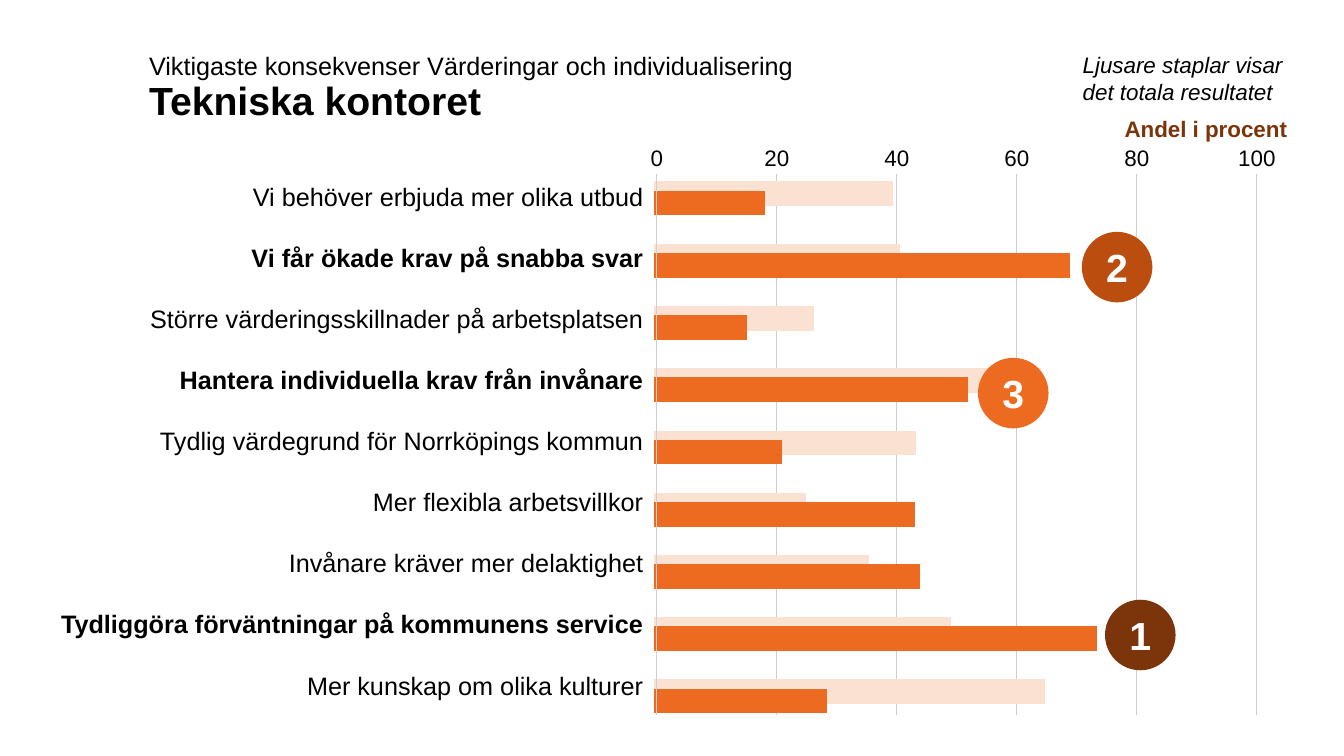
import lxml.etree as etree
import pptx
import pptx.chart.data
import pptx.dml.color
import pptx.enum.chart
import pptx.enum.shapes
import pptx.enum.text
import pptx.oxml.ns
import pptx.util

PX = 9144  # 100 px to the inch
ALIGN = pptx.enum.text.PP_ALIGN
ANCHOR = pptx.enum.text.MSO_ANCHOR
BLACK, WHITE, GRID = "000000", "FFFFFF", "D0CECE"
PALE, ORANGE, RUST, BROWN = "FBE1D2", "ED6B20", "BB4E0F", "7C340A"
qn = pptx.oxml.ns.qn


def color(value):
    return pptx.dml.color.RGBColor.from_string(value)


def write(frame, text, size=16, fill=BLACK, bold=False, italic=False,
          align=ALIGN.LEFT, anchor=ANCHOR.MIDDLE, wrap=True, spacing=None):
    frame.word_wrap = wrap
    frame.vertical_anchor = anchor
    paragraph = frame.paragraphs[0]
    paragraph.alignment = align
    paragraph.line_spacing = spacing
    run = paragraph.add_run()
    run.text = text
    run.font.name = "Arial"
    run.font.size = pptx.util.Pt(size)
    run.font.bold = bold
    run.font.italic = italic
    run.font.color.rgb = color(fill)


presentation = pptx.Presentation()
presentation.slide_width = 1333 * PX
presentation.slide_height = 750 * PX
slide = presentation.slides.add_slide(presentation.slide_layouts[6])
shapes = slide.shapes

# Bars: total result in pale, this office in orange; gridlines lie around them
AXIS_LEFT, AXIS_STEP = 651, 119
categories = [str(number) for number in range(1, 10)]
chart_layers = [
    (150, 154, PALE, [61, 63, 41, 99, 67, 39, 55, 76, 100]),
    (159, 136, ORANGE, [25, 94, 21, 71, 29, 59, 60, 100, 39]),
]
grid_layers = [(4, 3, 2, 1), (0, 5)]


def draw_gridlines(steps):
    for step in steps:
        x = (AXIS_LEFT + step * AXIS_STEP) * PX
        line = shapes.add_connector(pptx.enum.shapes.MSO_CONNECTOR.STRAIGHT,
                                    x, 173 * PX, x, 709 * PX)
        line.line.color.rgb = color(GRID)
        line.line.width = pptx.util.Pt(0.75)
        etree.SubElement(line._element.spPr, qn("a:effectLst"))


draw_gridlines(grid_layers[0])

for top, maximum, fill, values in chart_layers:
    data = pptx.chart.data.CategoryChartData()
    data.categories = categories
    data.add_series("Series 1", values)
    chart = shapes.add_chart(pptx.enum.chart.XL_CHART_TYPE.BAR_CLUSTERED,
                             636 * PX, top * PX, 626 * PX, 579 * PX, data).chart
    chart.has_legend = False
    chart.has_title = False
    chart.font.name = "Arial"
    chart.font.size = pptx.util.Pt(10)
    chart.font.color.rgb = color(BLACK)
    chart.category_axis.reverse_order = True
    chart.category_axis.visible = False
    chart.value_axis.visible = False
    chart.value_axis.has_major_gridlines = False
    chart.value_axis.minimum_scale = 0
    chart.value_axis.maximum_scale = maximum
    plot = chart.plots[0]
    plot.gap_width = 150
    plot.vary_by_categories = False
    bars = plot.series[0].format
    bars.fill.solid()
    bars.fill.fore_color.rgb = color(fill)
    bars.line.fill.background()

    # Fixed plot area and transparent chart background
    plot_area = chart._chartSpace.find(".//" + qn("c:plotArea"))
    for old_layout in plot_area.findall(qn("c:layout")):
        plot_area.remove(old_layout)
    layout = etree.Element(qn("c:layout"))
    plot_area.insert(0, layout)
    manual = etree.SubElement(layout, qn("c:manualLayout"))
    for tag, value in [("layoutTarget", "inner"), ("xMode", "edge"), ("yMode", "edge"),
                       ("x", "0.02"), ("y", "0.02"), ("w", "0.955"), ("h", "0.96")]:
        etree.SubElement(manual, qn("c:" + tag)).set("val", value)
    background = etree.Element(qn("c:spPr"))
    etree.SubElement(background, qn("a:noFill"))
    etree.SubElement(etree.SubElement(background, qn("a:ln")), qn("a:noFill"))
    chart._chartSpace.find(qn("c:chart")).addnext(background)

# Statement table, top three in bold
statements = [
    ("Vi behöver erbjuda mer olika utbud", False),
    ("Vi får ökade krav på snabba svar", True),
    ("Större värderingsskillnader på arbetsplatsen", False),
    ("Hantera individuella krav från invånare", True),
    ("Tydlig värdegrund för Norrköpings kommun", False),
    ("Mer flexibla arbetsvillkor", False),
    ("Invånare kräver mer delaktighet", False),
    ("Tydliggöra förväntningar på kommunens service", True),
    ("Mer kunskap om olika kulturer", False),
]
table = shapes.add_table(len(statements), 1, 33 * PX, 165 * PX, 606 * PX, 546 * PX).table
table.first_row = False
table.horz_banding = False
for row, (statement, bold) in enumerate(statements):
    cell = table.cell(row, 0)
    cell.fill.background()
    cell.margin_left = cell.margin_right = cell.margin_top = PX
    cell.margin_bottom = 0
    cell.vertical_anchor = ANCHOR.MIDDLE
    write(cell.text_frame, statement, size=18, bold=bold, align=ALIGN.RIGHT)

# Headings and notes
texts = [
    ((138, 70, 1107, 64), "Tekniska kontoret", dict(size=28, bold=True, spacing=0.9)),
    ((138, 51, 830, 27), "Viktigaste konsekvenser Värderingar och individualisering",
     dict(size=18)),
    ((1104, 109, 184, 37), "Andel i procent",
     dict(fill=BROWN, bold=True, align=ALIGN.CENTER, anchor=ANCHOR.TOP, wrap=False)),
    ((1064, 48, 246, 59), "Ljusare staplar visar det totala resultatet", dict(italic=True)),
]
# Axis labels centred on the gridlines
for step in range(6):
    texts.append(((AXIS_LEFT + step * AXIS_STEP - 39, 138, 79, 40), str(step * 20),
                  dict(align=ALIGN.CENTER, anchor=ANCHOR.TOP, wrap=False)))
for box, text, style in texts:
    textbox = shapes.add_textbox(*[length * PX for length in box])
    write(textbox.text_frame, text, **style)

draw_gridlines(grid_layers[1])

# Rank badges
for rank, left, top, fill in [("2", 1073, 230, RUST), ("1", 1096, 595, BROWN),
                              ("3", 970, 355, ORANGE)]:
    badge = shapes.add_shape(pptx.enum.shapes.MSO_SHAPE.OVAL,
                             left * PX, top * PX, 70 * PX, 70 * PX)
    badge.shadow.inherit = False
    badge.fill.solid()
    badge.fill.fore_color.rgb = color(fill)
    badge.line.fill.background()
    write(badge.text_frame, rank, size=28, fill=WHITE, bold=True, align=ALIGN.CENTER)

presentation.save("out.pptx")
